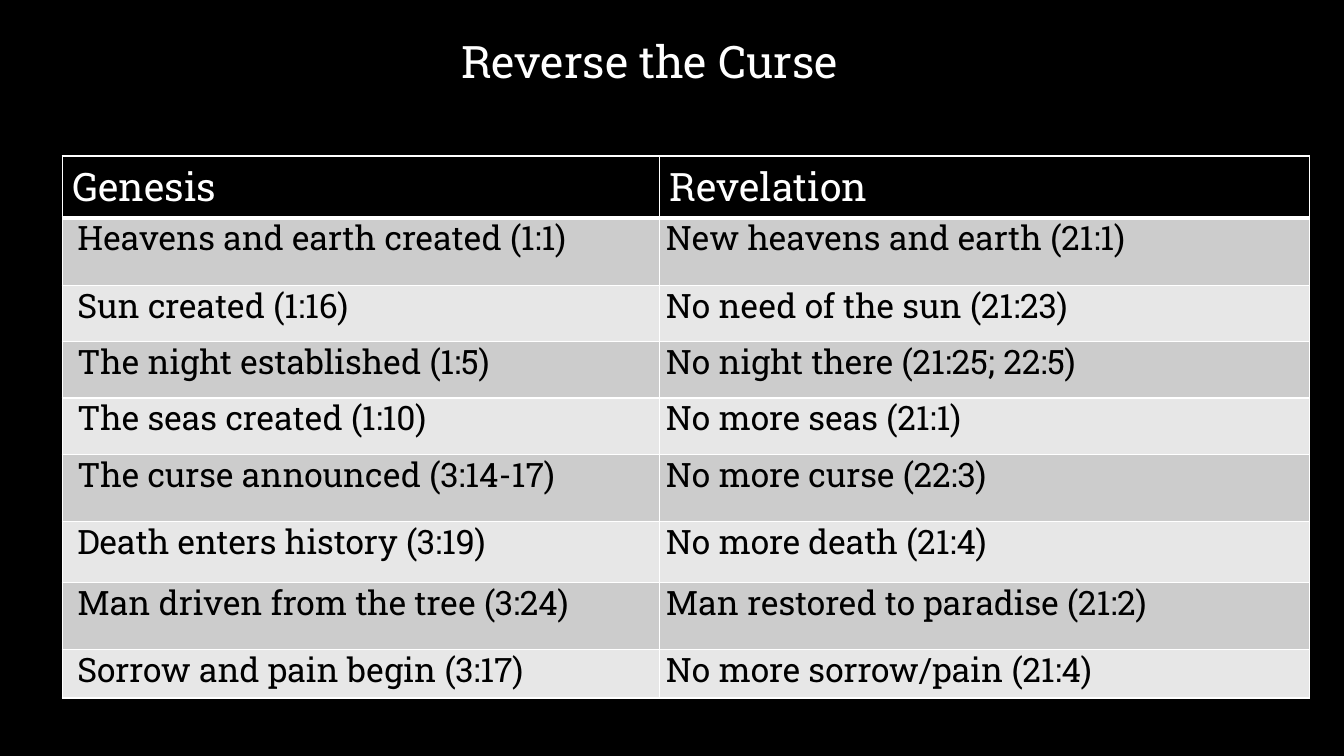
import pptx
import pptx.dml.color
import pptx.enum.text
import pptx.oxml
import pptx.oxml.ns
import pptx.util

Cm = pptx.util.Cm
Pt = pptx.util.Pt

PAIRS = [
    ("Heavens and earth created (1:1)", "New heavens and earth (21:1)"),
    ("Sun created (1:16)", "No need of the sun (21:23)"),
    ("The night established (1:5)", "No night there (21:25; 22:5)"),
    ("The seas created (1:10)", "No more seas (21:1)"),
    ("The curse announced (3:14-17)", "No more curse (22:3)"),
    ("Death enters history (3:19)", "No more death (21:4)"),
    ("Man driven from the tree (3:24)", "Man restored to paradise (21:2)"),
    ("Sorrow and pain begin (3:17)", "No more sorrow/pain (21:4)"),
]
HEADINGS = ("Genesis", "Revelation")
COLUMN_WIDTHS = (15.06, 16.38)
ROW_HEIGHTS = (1.56, 1.7, 1.42, 1.42, 1.42, 1.7, 1.52, 1.7, 1.22)
TEXT_INSETS = (0.38, 0.15)


def rgb(value):
    return pptx.dml.color.RGBColor.from_string(value)


class Deck:
    font = "Roboto Slab"
    black = "000000"
    white = "FFFFFF"
    bands = ("CCCCCC", "E7E7E7")

    def __init__(self):
        self.prs = pptx.Presentation()
        self.prs.slide_width = Cm(33.87)
        self.prs.slide_height = Cm(19.05)
        self.s = None

    def add_slide(self):
        self.s = self.prs.slides.add_slide(self.prs.slide_layouts[5])
        fill = self.s.background.fill
        fill.solid()
        fill.fore_color.rgb = rgb(self.black)

    def run(self, p, text, size, color):
        r = p.add_run()
        r.text = text
        r.font.name = self.font
        r.font.size = Pt(size)
        r.font.bold = False
        r.font.color.rgb = rgb(color)

    def title(self, text, x, y, w, h):
        sp = self.s.shapes.title
        sp.left, sp.top, sp.width, sp.height = Cm(x), Cm(y), Cm(w), Cm(h)
        tf = sp.text_frame
        tf.word_wrap = True
        tf.auto_size = pptx.enum.text.MSO_AUTO_SIZE.NONE
        tf.vertical_anchor = pptx.enum.text.MSO_ANCHOR.TOP
        p = tf.paragraphs[0]
        p.alignment = pptx.enum.text.PP_ALIGN.CENTER
        self.run(p, text, 32, self.white)

    def borders(self, cell, bottom):
        tcPr = cell._tc.get_or_add_tcPr()
        for side, width in (("L", 1), ("R", 1), ("T", 1), ("B", bottom)):
            tcPr.append(pptx.oxml.parse_xml(
                f'<a:ln{side} {pptx.oxml.ns.nsdecls("a")} w="{Pt(width)}">'
                f'<a:solidFill><a:srgbClr val="{self.white}"/></a:solidFill>'
                f'</a:ln{side}>'))

    def cell(self, cell, fill, bottom=1):
        self.borders(cell, bottom)
        cell.fill.solid()
        cell.fill.fore_color.rgb = rgb(fill)
        return cell.text_frame.paragraphs[0]

    def header_cell(self, cell, text):
        p = self.cell(cell, self.black, bottom=3)
        self.run(p, text, 28, self.white)

    def body_cell(self, cell, text, fill, inset):
        p = self.cell(cell, fill)
        cell.margin_left, cell.margin_right = Cm(inset), Cm(0.15)
        cell.margin_top, cell.margin_bottom = Cm(0.6), 0
        p.line_spacing = Pt(13)
        p.space_after = Pt(2)
        self.run(p, text, 24, self.black)

    def table(self, headings, rows, x, y):
        table = self.s.shapes.add_table(
            len(rows) + 1, len(headings), Cm(x), Cm(y),
            Cm(sum(COLUMN_WIDTHS)), Cm(sum(ROW_HEIGHTS))).table
        for column, width in zip(table.columns, COLUMN_WIDTHS):
            column.width = Cm(width)
        for row, height in zip(table.rows, ROW_HEIGHTS):
            row.height = Cm(height)
        for j, heading in enumerate(headings):
            self.header_cell(table.cell(0, j), heading)
        for i, row in enumerate(rows):
            for j, text in enumerate(row):
                self.body_cell(table.cell(i + 1, j), text,
                               self.bands[i % 2], TEXT_INSETS[j])


def main():
    deck = Deck()
    deck.add_slide()
    deck.title("Reverse the Curse", 7.65, 0.71, 17.45, 1.63)
    deck.table(HEADINGS, PAIRS, 1.57, 3.93)
    deck.prs.save("out.pptx")


if __name__ == "__main__":
    main()
